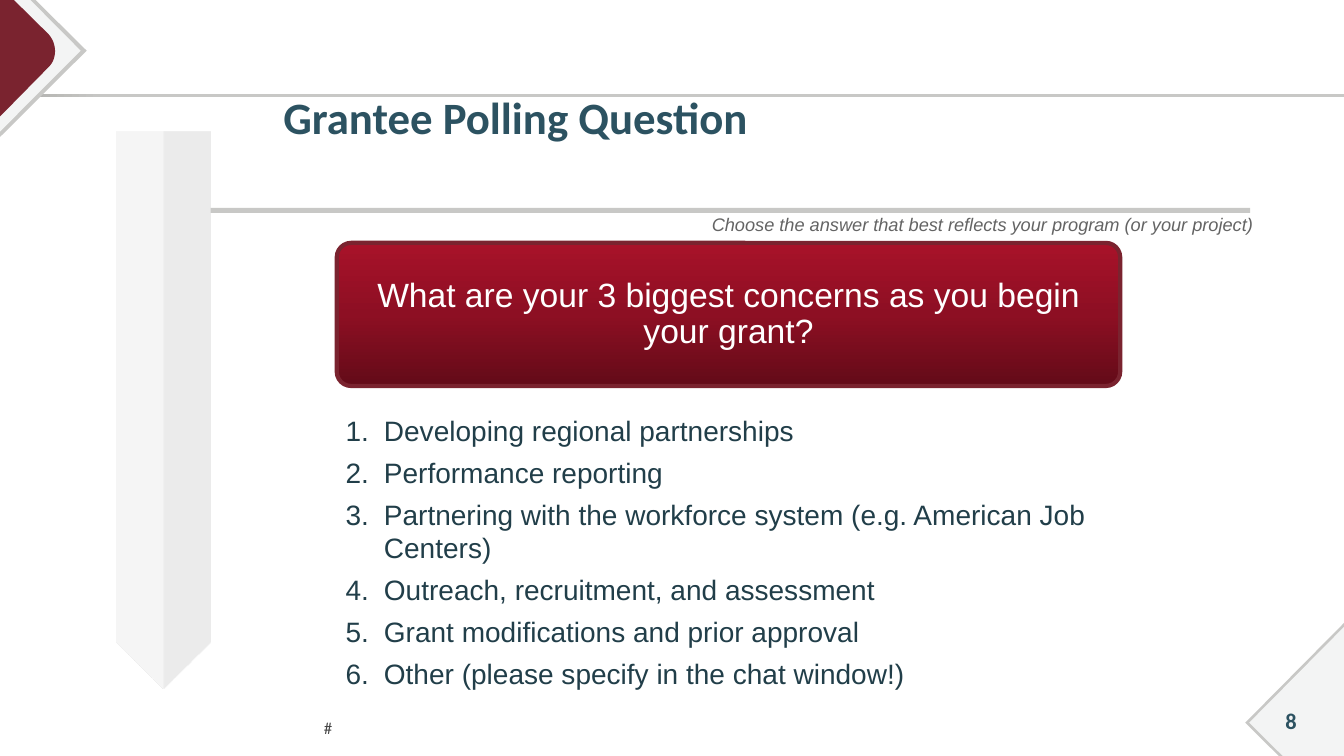
from dataclasses import dataclass

from lxml.etree import SubElement
from pptx import Presentation
from pptx.dml.color import RGBColor
from pptx.enum.shapes import MSO_SHAPE
from pptx.enum.text import MSO_ANCHOR, PP_ALIGN
from pptx.oxml.ns import qn
from pptx.util import Inches, Pt


@dataclass(frozen=True)
class Theme:
    heading: str = "Calibri"
    body: str = "Arial"
    navy: str = "2C5261"
    ink: str = "213E49"
    grey: str = "646464"
    footer: str = "454545"
    silver: str = "C8C8C6"
    mist: str = "F3F4F4"
    maroon: str = "7A232F"
    white: str = "FFFFFF"
    title_size: int = 32
    question_size: int = 24
    answer_size: int = 20
    number_size: int = 16
    hint_size: int = 13
    footer_size: int = 12
    # Gradient stops: position, colour, opacity (all but colour in percent)
    rule_stops: tuple = ((0, "ABABA8", 100), (8, "C8C8C6", 100), (100, "C8C8C6", 100))
    arrow_stops: tuple = ((49, "F2F2F2", 65), (51, "D9D9D9", 50))
    question_stops: tuple = ((0, "630B18", 100), (50, "8D0F23", 100), (100, "A81229", 100))


THEME = Theme()


@dataclass(frozen=True)
class Box:
    left: int
    top: int
    width: int
    height: int

    def inner(self, left, top, width, height):
        """Return an inner box, given in percent of this one."""
        return Box(self.left + round(self.width * left / 100),
                   self.top + round(self.height * top / 100),
                   round(self.width * width / 100),
                   round(self.height * height / 100))

    def point(self, x, y):
        return self.left + round(self.width * x), self.top + round(self.height * y)

    @property
    def frame(self):
        return self.left, self.top, self.width, self.height


def paint(shape, color):
    shape.shadow.inherit = False
    shape.fill.solid()
    shape.fill.fore_color.rgb = RGBColor.from_string(color)
    shape.line.fill.background()


def paint_gradient(shape, stops, angle):
    """Fill with stops along a clockwise angle in degrees."""
    shape.shadow.inherit = False
    shape.line.fill.background()
    shape.fill.gradient()
    gradient = shape._element.spPr.find(qn("a:gradFill"))
    stop_list = gradient.find(qn("a:gsLst"))
    for old_stop in list(stop_list):
        stop_list.remove(old_stop)
    for position, color, opacity in stops:
        stop = SubElement(stop_list, qn("a:gs"), pos=str(position * 1000))
        tint = SubElement(stop, qn("a:srgbClr"), val=color)
        if opacity < 100:
            SubElement(tint, qn("a:alpha"), val=str(opacity * 1000))
    gradient.find(qn("a:lin")).set("ang", str(angle * 60000))


def write(shape, lines, font, size, color, align=PP_ALIGN.LEFT,
          anchor=MSO_ANCHOR.MIDDLE, bold=False, italic=False):
    frame = shape.text_frame
    frame.word_wrap = True
    frame.vertical_anchor = anchor
    frame.text = "\n".join(lines)
    for para in frame.paragraphs:
        para.alignment = align
        for span in para.runs:
            span.font.name = font
            span.font.size = Pt(size)
            span.font.color.rgb = RGBColor.from_string(color)
            span.font.bold = bold
            span.font.italic = italic
    return frame


def add_outline(page, box, points, color):
    start, *others = [box.point(x, y) for x, y in points]
    builder = page.shapes.build_freeform(*start)
    builder.add_line_segments(others, close=True)
    paint(builder.convert_to_shape(), color)


def curve(start, first, second, end, steps=16):
    """Return points along a cubic curve."""
    points = []
    for step in range(steps + 1):
        t = step / steps
        weights = ((1 - t) ** 3, 3 * t * (1 - t) ** 2, 3 * t * t * (1 - t), t ** 3)
        points.append(tuple(sum(weight * knot[axis] for weight, knot
                                in zip(weights, (start, first, second, end)))
                            for axis in (0, 1)))
    return points


def add_top_corner(page, box):
    tip = curve((.56, .25), (.66, .32), (.66, .43), (.56, .49))
    layers = [
        ([(0, 0), (.41, 0), (1, .37), (0, 1)], THEME.silver),
        ([(0, 0), (.35, 0), (.93, .37), (0, .96)], THEME.mist),
        ([(0, 0), (.16, 0), *tip, (0, .85)], THEME.maroon),
    ]
    for points, color in layers:
        add_outline(page, box, points, color)


def add_bottom_corner(page, box):
    add_outline(page, box, [(1, 0), (1, 1), (.34, 1), (0, .75)], THEME.silver)
    add_outline(page, box, [(1, .03), (1, 1), (.38, 1), (.04, .75)], THEME.mist)


def add_backdrop(page, box):
    top_rule = page.shapes.add_shape(MSO_SHAPE.RECTANGLE, *box.inner(0, 12.4, 100, .4).frame)
    paint_gradient(top_rule, THEME.rule_stops, 0)
    add_top_corner(page, box.inner(0, 0, 6.45, 18.13))
    add_bottom_corner(page, box.inner(92.65, 82.4, 7.35, 17.6))

    arrow = page.shapes.add_shape(MSO_SHAPE.DOWN_ARROW, *box.inner(8.7, 17.47, 6.98, 73.6).frame)
    arrow.adjustments[0] = 1
    arrow.adjustments[1] = .5
    paint_gradient(arrow, THEME.arrow_stops, 0)

    title_rule = page.shapes.add_shape(MSO_SHAPE.RECTANGLE,
                                       *box.inner(15.68, 27.5, 77.34, .67).frame)
    paint(title_rule, THEME.silver)


def add_heading(page, box, title, hint):
    hint_box = page.shapes.add_textbox(*box.inner(12.4, 82, 87.6, 18).frame)
    write(hint_box, [hint], THEME.body, THEME.hint_size, THEME.grey,
          PP_ALIGN.RIGHT, MSO_ANCHOR.TOP, italic=True)
    title_box = page.shapes.add_textbox(*box.inner(0, 0, 100, 65.3).frame)
    frame = write(title_box, [title], THEME.heading, THEME.title_size, THEME.navy, bold=True)
    frame.margin_left = Inches(.2)
    frame.paragraphs[0].line_spacing = .9


def add_footer(page, box, number, mark):
    number_box = page.shapes.add_textbox(*box.inner(93.4, 92.67, 5.33, 5.33).frame)
    write(number_box, [number], THEME.heading, THEME.number_size, THEME.navy,
          PP_ALIGN.CENTER, bold=True)
    mark_box = page.shapes.add_textbox(*box.inner(12.53, 93.6, 23.78, 5.33).frame)
    write(mark_box, [mark], THEME.heading, THEME.footer_size, THEME.footer, PP_ALIGN.CENTER)


def add_question(page, box, question):
    panel = page.shapes.add_shape(MSO_SHAPE.ROUNDED_RECTANGLE, *box.frame)
    panel.adjustments[0] = .1
    paint_gradient(panel, THEME.question_stops, 270)
    panel.line.color.rgb = RGBColor.from_string(THEME.maroon)
    panel.line.width = Pt(3)
    frame = write(panel, [question], THEME.body, THEME.question_size, THEME.white,
                  PP_ALIGN.CENTER)
    frame.paragraphs[0].line_spacing = .9


def add_answers(page, box, answers):
    answer_box = page.shapes.add_textbox(*box.frame)
    frame = write(answer_box, answers, THEME.body, THEME.answer_size, THEME.ink,
                  anchor=MSO_ANCHOR.TOP)
    indent = Inches(.38)
    for para in frame.paragraphs:
        para.space_after = Pt(6)
        properties = para._p.get_or_add_pPr()
        properties.set("marL", str(indent))
        properties.set("indent", str(-indent))
        SubElement(properties, qn("a:buFont"), typeface="+mj-lt")
        SubElement(properties, qn("a:buAutoNum"), type="arabicPeriod")


def main():
    deck = Presentation()
    deck.slide_width, deck.slide_height = Inches(13.33), Inches(7.5)
    page = deck.slides.add_slide(deck.slide_layouts[6])
    whole = Box(0, 0, deck.slide_width, deck.slide_height)
    add_backdrop(page, whole)
    add_heading(page, whole.inner(19.58, 8.27, 74.34, 23.47), "Grantee Polling Question",
                "Choose the answer that best reflects your program (or your project)")
    add_footer(page, whole, "8", "#")
    add_question(page, whole.inner(25.06, 32.13, 58.29, 18.93),
                 "What are your 3 biggest concerns as you begin your grant?")
    add_answers(page, whole.inner(24.98, 54, 58.36, 38.4), [
        "Developing regional partnerships",
        "Performance reporting",
        "Partnering with the workforce system (e.g. American Job Centers)",
        "Outreach, recruitment, and assessment",
        "Grant modifications and prior approval",
        "Other (please specify in the chat window!)",
    ])
    deck.save("out.pptx")


if __name__ == "__main__":
    main()
